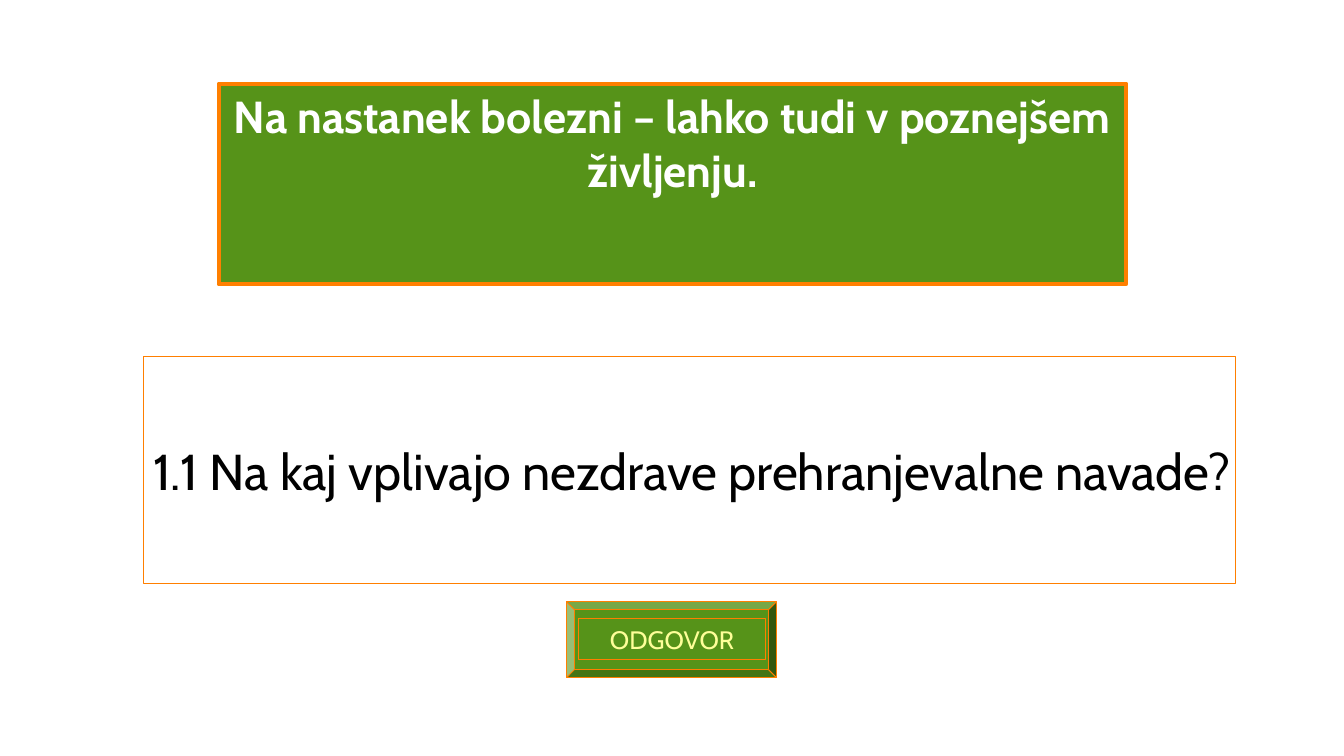
from pptx import Presentation
from pptx.dml.color import RGBColor
from pptx.enum.shapes import MSO_SHAPE
from pptx.enum.text import MSO_ANCHOR, PP_ALIGN
from pptx.util import Inches, Pt

RECTANGLE, BEVEL = MSO_SHAPE.RECTANGLE, MSO_SHAPE.BEVEL
TOP, MIDDLE = MSO_ANCHOR.TOP, MSO_ANCHOR.MIDDLE
LEFT, CENTER = PP_ALIGN.LEFT, PP_ALIGN.CENTER
GREEN = RGBColor(0x56, 0x93, 0x19)
ORANGE = RGBColor(0xFF, 0x7F, 0x00)
YELLOW = RGBColor(0xFF, 0xFF, 0x99)
WHITE = RGBColor(0xFF, 0xFF, 0xFF)
BLACK = RGBColor(0x00, 0x00, 0x00)

presentation = Presentation()
presentation.slide_width = Inches(13.33)
presentation.slide_height = Inches(7.5)
slide = presentation.slides.add_slide(presentation.slide_layouts[6])


def add_panel(parent, preset, bounds, fill, border=0.75):
    panel = parent.shapes.add_shape(preset, *map(Inches, bounds))
    panel.shadow.inherit = False
    panel.fill.solid()
    panel.fill.fore_color.rgb = fill
    panel.line.color.rgb = ORANGE
    panel.line.width = Pt(border)
    return panel


def write(panel, text, size, color, align=CENTER, anchor=TOP, wrap=True, bold=False):
    frame = panel.text_frame
    frame.word_wrap = wrap
    frame.vertical_anchor = anchor
    paragraph = frame.paragraphs[0]
    paragraph.text = text
    paragraph.alignment = align
    paragraph.font.name = "Cabin"
    paragraph.font.size = Pt(size)
    paragraph.font.bold = bold
    paragraph.font.color.rgb = color


button = slide.shapes.add_group_shape()
button_frame = add_panel(button, BEVEL, (5.62, 5.97, 2.08, 0.75), GREEN)
button_frame.adjustments[0] = 0.104
button_label = add_panel(button, RECTANGLE, (5.74, 6.14, 1.85, 0.4), GREEN)
write(button_label, "ODGOVOR", 18, YELLOW)

question = add_panel(slide, RECTANGLE, (1.42, 3.54, 10.83, 2.25), WHITE)
write(question, "1.1 Na kaj vplivajo nezdrave prehranjevalne navade?", 36, BLACK,
      align=LEFT, anchor=MIDDLE, wrap=False)

answer = add_panel(slide, RECTANGLE, (2.17, 0.83, 9, 1.99), GREEN, border=3)
write(answer, "Na nastanek bolezni – lahko tudi v poznejšem življenju.", 32, WHITE, bold=True)

presentation.save("out.pptx")
